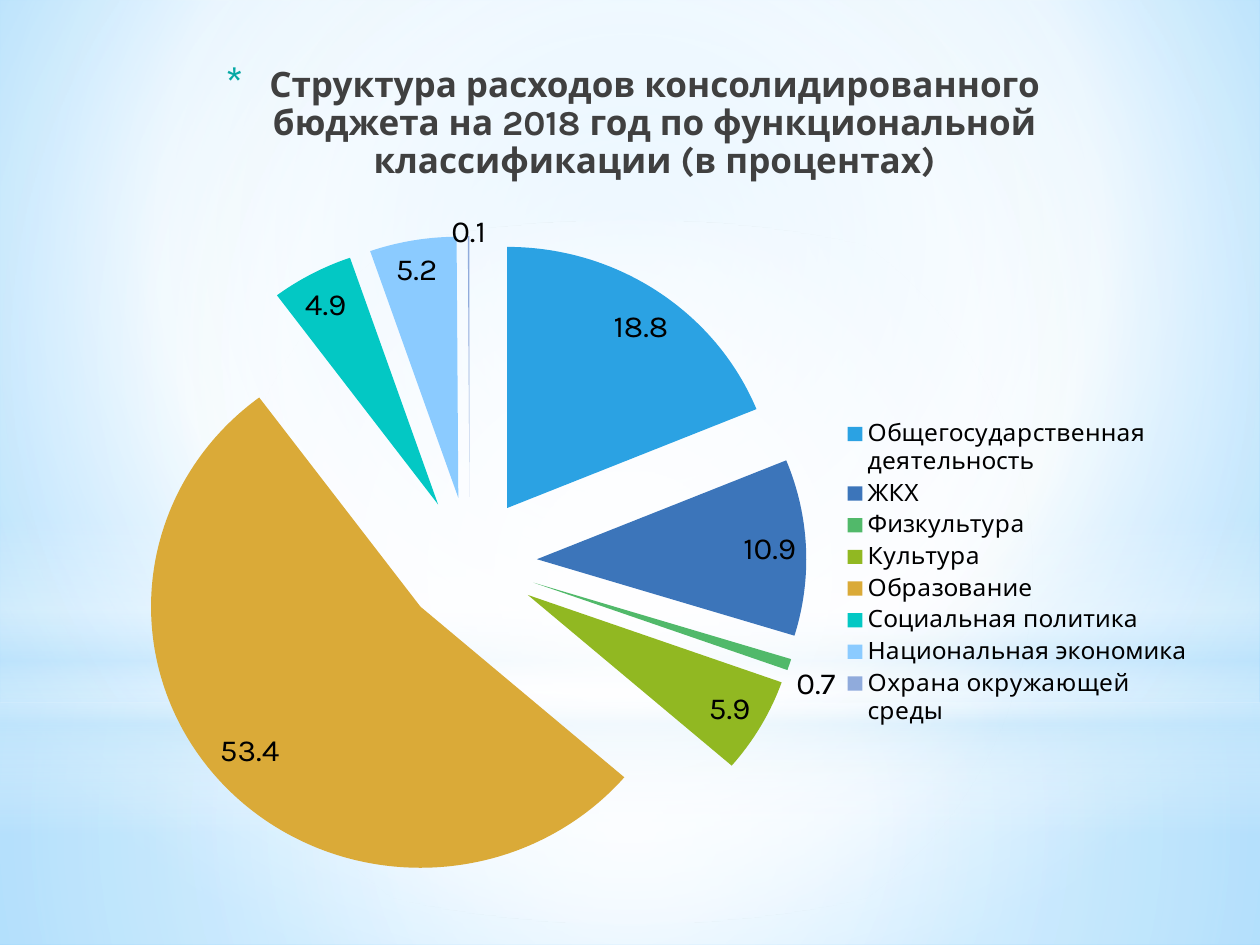
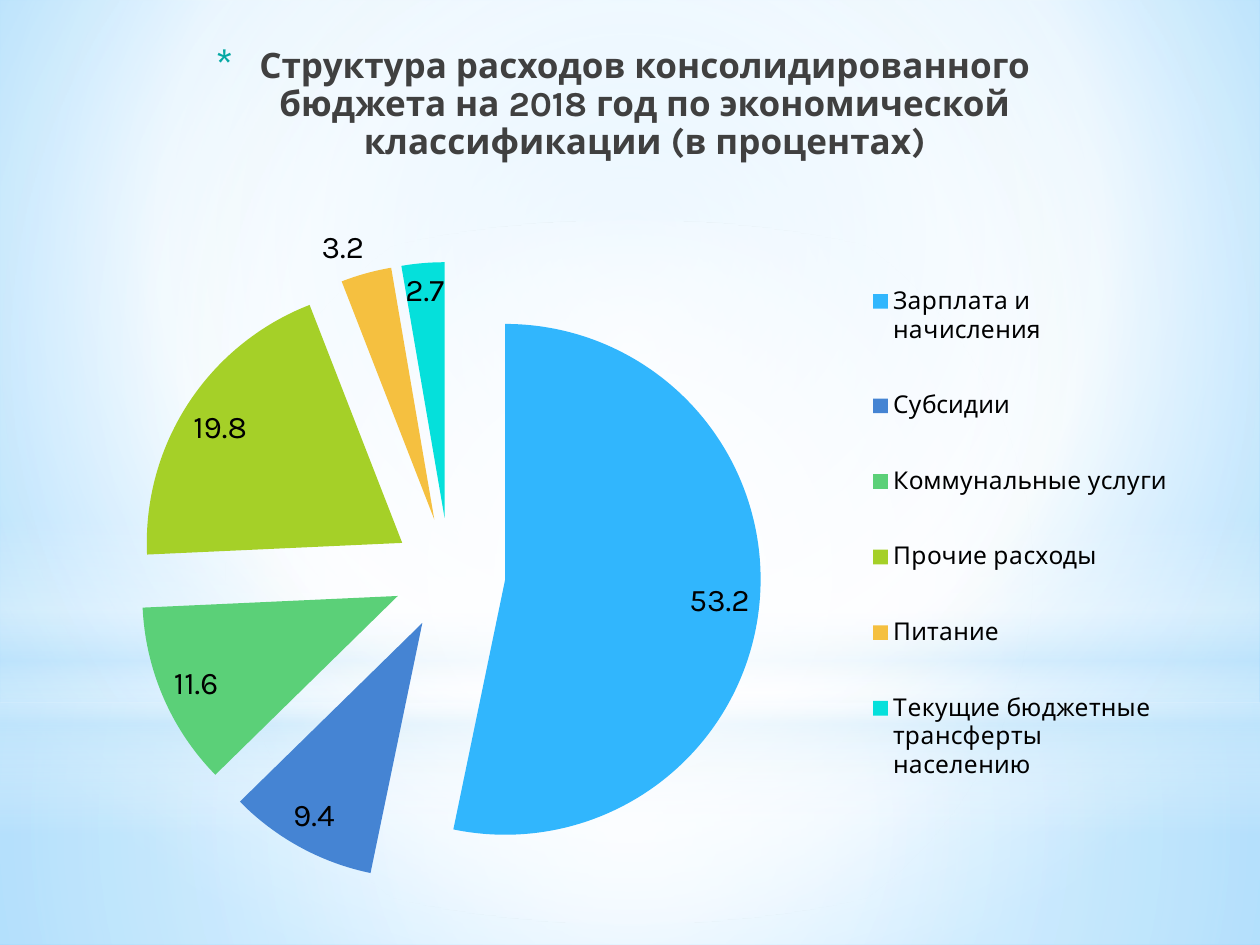
from pptx import Presentation
from pptx import util as u
from pptx.chart import data
from pptx.dml.color import RGBColor
from pptx.enum import chart as ch, shapes, text
from pptx.oxml import parse_xml
from pptx.oxml.ns import nsdecls

WIDTH, HEIGHT = 25.4, 19.05
FONT = "Karla"

WHITE = RGBColor(0xFF, 0xFF, 0xFF)
HAZE = RGBColor(0xC6, 0xE7, 0xFC)
PALE_SKY = RGBColor(0xB0, 0xE0, 0xFF)
SKY = RGBColor(0x6B, 0xC5, 0xFF)
BLACK = RGBColor(0x00, 0x00, 0x00)
HEADING = RGBColor(0x40, 0x40, 0x40)
TEAL = RGBColor(0x04, 0xA8, 0xA4)

FUNCTIONAL_COLOURS = [
    RGBColor(0x2B, 0xA2, 0xE3), RGBColor(0x3C, 0x75, 0xBA),
    RGBColor(0x51, 0xB9, 0x6A), RGBColor(0x91, 0xB8, 0x22),
    RGBColor(0xDA, 0xAA, 0x38), RGBColor(0x03, 0xC8, 0xC4),
    RGBColor(0x8B, 0xCB, 0xFF), RGBColor(0x90, 0xAB, 0xDC),
]
ECONOMIC_COLOURS = [
    RGBColor(0x31, 0xB6, 0xFD), RGBColor(0x45, 0x84, 0xD3),
    RGBColor(0x5B, 0xD0, 0x78), RGBColor(0xA5, 0xD0, 0x28),
    RGBColor(0xF5, 0xC0, 0x40), RGBColor(0x05, 0xE0, 0xDB),
]

HEADLINE = ("Структура расходов консолидированного бюджета на 2018 год "
            "по {} классификации (в процентах)")
FUNCTIONAL_SHARES = {
    "Общегосударственная деятельность": 18.8,
    "ЖКХ": 10.9,
    "Физкультура": 0.7,
    "Культура": 5.9,
    "Образование": 53.4,
    "Социальная политика": 4.9,
    "Национальная экономика": 5.2,
    "Охрана окружающей среды": 0.1,
}
ECONOMIC_SHARES = {
    "Зарплата и начисления": 53.2,
    "Субсидии": 9.4,
    "Коммунальные услуги": 11.6,
    "Прочие расходы": 19.8,
    "Питание": 3.2,
    "Текущие бюджетные трансферты населению": 2.7,
}

CENTRE = (50, 50, 50, 50)
RECT = shapes.MSO_SHAPE.RECTANGLE
OVAL = shapes.MSO_SHAPE.OVAL
BACKDROP = [
    (RECT, 14.17, 4.88, [(0, WHITE, 91), (37, WHITE, 76), (100, HAZE, 79)], CENTRE),
    (RECT, 0, 14.17, [(0, WHITE, 89), (48, WHITE, 62), (100, HAZE, 79)], CENTRE),
    (RECT, 10.46, 6.35, [(0, WHITE, 0), (29, WHITE, 30), (45, HAZE, 40),
                         (55, WHITE, 26), (65, HAZE, 60), (100, WHITE, 0)], None),
    (OVAL, 4.45, 14.17, [(0, WHITE, 100), (56, WHITE, 0)], CENTRE),
]


def write(frame, content, size=20, bold=False, colour=BLACK, align=text.PP_ALIGN.LEFT):
    paragraph = frame.paragraphs[0]
    paragraph.alignment = align
    paragraph.line_spacing = 0.9
    run = paragraph.add_run()
    run.text = content
    run.font.name = FONT
    run.font.size = u.Pt(size)
    run.font.bold = bold
    run.font.color.rgb = colour
    return paragraph


def paint_gradient(fill, element, stops, focus=None):
    fill.gradient()
    stop_list = "".join(
        f'<a:gs pos="{place * 1000}"><a:srgbClr val="{colour}">'
        f'<a:alpha val="{opacity * 1000}"/></a:srgbClr></a:gs>'
        for place, colour, opacity in stops)
    if focus:
        edges = " ".join(f'{side}="{share * 1000}"' for side, share in zip("ltrb", focus))
        direction = f'<a:path path="circle"><a:fillToRect {edges}/></a:path>'
    else:
        direction = '<a:lin ang="5400000" scaled="0"/>'
    plain = element.xpath(".//a:gradFill")[0]
    plain.getparent().replace(plain, parse_xml(
        f'<a:gradFill {nsdecls("a")} rotWithShape="1">'
        f'<a:gsLst>{stop_list}</a:gsLst>{direction}</a:gradFill>'))


def manual_layout(box, inner=False):
    target = '<c:layoutTarget val="inner"/>' if inner else ""
    modes = '<c:xMode val="edge"/><c:yMode val="edge"/>'
    sizes = "".join(f'<c:{side} val="{share}"/>' for side, share in zip("xywh", box))
    return parse_xml(f'<c:layout {nsdecls("c")}><c:manualLayout>'
                     f'{target}{modes}{sizes}</c:manualLayout></c:layout>')


class BudgetDeck:
    def __init__(self):
        self.deck = Presentation()
        self.deck.slide_width = u.Cm(WIDTH)
        self.deck.slide_height = u.Cm(HEIGHT)
        self.slide = None

    def new_slide(self):
        self.slide = self.deck.slides.add_slide(self.deck.slide_layouts[5])

    def backdrop(self):
        master = self.deck.slide_master
        paint_gradient(master.background.fill, master.element,
                       [(0, PALE_SKY, 100), (60, WHITE, 100), (100, SKY, 100)],
                       (20, 10, 20, 60))
        for order, (kind, top, height, stops, focus) in enumerate(BACKDROP):
            glow = self.slide.shapes.add_shape(
                kind, 0, u.Cm(top), u.Cm(WIDTH), u.Cm(height))
            glow.shadow.inherit = False
            glow.line.fill.background()
            paint_gradient(glow.fill, glow.element, stops, focus)
            glow.element.nvSpPr.cNvPr.id = 20 + order
            master.shapes.element.insert(2 + order, glow.element)

    def title(self, content, left, top):
        heading = self.slide.shapes.title
        heading.left, heading.top = u.Cm(left), u.Cm(top)
        heading.width, heading.height = u.Cm(18.08), u.Cm(3.18)
        frame = heading.text_frame
        frame.word_wrap = True
        frame.auto_size = text.MSO_AUTO_SIZE.NONE
        frame.vertical_anchor = text.MSO_ANCHOR.MIDDLE
        paragraph = write(frame, content, bold=True, colour=HEADING,
                          align=text.PP_ALIGN.CENTER)
        properties = paragraph._p.get_or_add_pPr()
        indent = u.Cm(0.89)
        properties.set("marL", str(indent))
        properties.set("indent", str(-indent))
        for bullet in (f'<a:buClr {nsdecls("a")}><a:srgbClr val="{TEAL}"/></a:buClr>',
                       f'<a:buSzPct {nsdecls("a")} val="128000"/>',
                       f'<a:buFont {nsdecls("a")} typeface="{FONT}"/>',
                       f'<a:buChar {nsdecls("a")} char="*"/>'):
            properties.append(parse_xml(bullet))

    def pie(self, shares, colours, box, plot_box, legend_box, explosion):
        figures = data.CategoryChartData(number_format="0.0")
        figures.categories = list(shares)
        figures.add_series("Расходы", list(shares.values()))
        chart = self.slide.shapes.add_chart(
            ch.XL_CHART_TYPE.PIE, *map(u.Cm, box), figures).chart
        chart.has_title = False
        chart.font.name = FONT
        chart.font.size = u.Pt(18)
        chart.font.color.rgb = BLACK

        chart.has_legend = True
        legend = chart.legend
        legend.position = ch.XL_LEGEND_POSITION.RIGHT
        legend.include_in_layout = False
        legend.font.name = FONT
        legend.font.size = u.Pt(14)
        legend.font.color.rgb = BLACK

        plot = chart.plots[0]
        plot.vary_by_categories = True
        plot.has_data_labels = True
        labels = plot.data_labels
        labels.show_value = True
        labels.show_percentage = False
        labels.number_format = "0.0"
        labels.number_format_is_linked = False
        labels.position = ch.XL_LABEL_POSITION.BEST_FIT

        series = plot.series[0]
        series._element.xpath("c:tx")[0].addnext(
            parse_xml(f'<c:explosion {nsdecls("c")} val="{explosion}"/>'))
        for index, colour in enumerate(colours):
            sector = series.points[index].format
            sector.fill.solid()
            sector.fill.fore_color.rgb = colour
            sector.line.fill.background()

        space = chart._chartSpace
        for automatic in space.xpath(".//c:plotArea/c:layout | .//c:legend/c:layout"):
            automatic.getparent().remove(automatic)
        space.xpath(".//c:plotArea")[0].insert(0, manual_layout(plot_box, inner=True))
        space.xpath(".//c:legendPos")[0].addnext(manual_layout(legend_box))

    def save(self):
        self.deck.save("out.pptx")


def main():
    budget = BudgetDeck()

    budget.new_slide()
    budget.backdrop()
    budget.title(HEADLINE.format("функциональной"), 3.71, 0.91)
    budget.pie(FUNCTIONAL_SHARES, FUNCTIONAL_COLOURS,
               box=(1.3, 3.89, 23.01, 14.45),
               plot_box=(0.06, 0.03, 0.59, 0.94),
               legend_box=(0.68, 0.29, 0.31, 0.45), explosion=25)

    budget.new_slide()
    budget.title(HEADLINE.format("экономической"), 3.51, 0.53)
    budget.pie(ECONOMIC_SHARES, ECONOMIC_COLOURS,
               box=(0.89, 3.53, 23.01, 14.61),
               plot_box=(0.01, 0.12, 0.69, 0.86),
               legend_box=(0.72, 0.09, 0.27, 0.81), explosion=22)

    budget.save()


if __name__ == "__main__":
    main()
